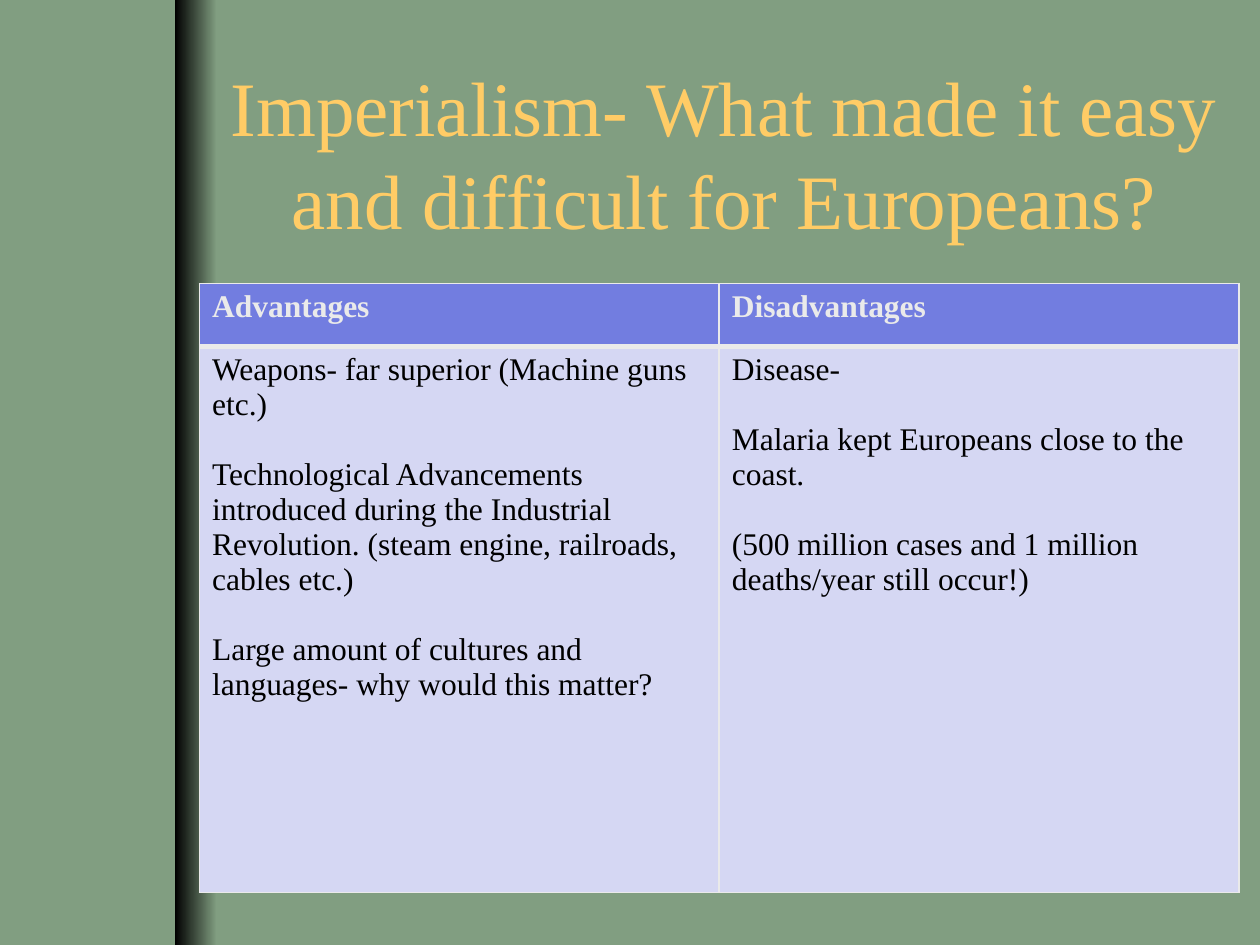
from lxml import etree
from pptx import Presentation
from pptx.dml.color import RGBColor
from pptx.enum.shapes import MSO_SHAPE
from pptx.enum.text import MSO_ANCHOR, PP_ALIGN
from pptx.oxml.ns import qn
from pptx.util import Pt

RECTANGLE = MSO_SHAPE.RECTANGLE
MIDDLE = MSO_ANCHOR.MIDDLE
CENTER = PP_ALIGN.CENTER

HEADINGS = ["Advantages", "Disadvantages"]
POINTS = [
    [
        "Weapons- far superior (Machine guns etc.)",
        "Technological Advancements introduced during the Industrial "
        "Revolution. (steam engine, railroads, cables etc.)",
        "Large amount of cultures and languages- why would this matter?",
    ],
    [
        "Disease-",
        "Malaria kept Europeans close to the coast.",
        "(500 million cases and 1 million deaths/year still occur!)",
    ],
]


def color(hex_value):
    return RGBColor.from_string(hex_value)


class ImperialismSlide:
    font = "Times New Roman"
    green = "819E81"
    gold = "FFCC66"
    pale = "EAEAEA"
    black = "000000"
    header_fill = "727DE0"
    body_fill = "D5D7F3"

    def __init__(self, slide):
        self.slide = slide
        background = slide.background.fill
        background.solid()
        background.fore_color.rgb = color(self.green)

    def style(self, paragraph, size, hex_value, bold=False):
        for run in paragraph.runs:
            run.font.name = self.font
            run.font.size = Pt(size)
            run.font.bold = bold
            run.font.color.rgb = color(hex_value)

    def shaded_band(self, left, top, width, height):
        band = self.slide.shapes.add_shape(
            RECTANGLE, Pt(left), Pt(top), Pt(width), Pt(height))
        band.shadow.inherit = False
        band.line.fill.background()
        band.fill.gradient()
        band.fill.gradient_angle = 0
        for stop, shade in zip(band.fill.gradient_stops, (self.black, self.green)):
            stop.color.rgb = color(shade)

    def title(self, text, left, top, width, height):
        frame = self.slide.shapes.add_textbox(
            Pt(left), Pt(top), Pt(width), Pt(height)).text_frame
        frame.word_wrap = True
        frame.vertical_anchor = MIDDLE
        frame.text = text
        heading = frame.paragraphs[0]
        heading.alignment = CENTER
        heading.line_spacing = Pt(53)
        self.style(heading, 44, self.gold)

    def border(self, cell, side, width):
        edge = etree.Element(qn(f"a:ln{side}"), w=str(Pt(width)))
        solid = etree.SubElement(edge, qn("a:solidFill"))
        etree.SubElement(solid, qn("a:srgbClr"), val=self.pale)
        return edge

    def cell(self, cell, lines, fill, ink, bold, widths):
        cell.text = "\n".join(lines)
        for index, paragraph in enumerate(cell.text_frame.paragraphs):
            if index:
                paragraph.space_before = Pt(20)
            self.style(paragraph, 18, ink, bold)
        cell.fill.solid()
        cell.fill.fore_color.rgb = color(fill)
        properties = cell._tc.get_or_add_tcPr()
        for position, (side, width) in enumerate(zip("LRTB", widths)):
            properties.insert(position, self.border(cell, side, width))

    def comparison(self, left, top, width, row_heights):
        table = self.slide.shapes.add_table(
            2, len(HEADINGS), Pt(left), Pt(top), Pt(width),
            Pt(sum(row_heights))).table
        table.first_row = False
        table.horz_banding = False
        for row, height in zip(table.rows, row_heights):
            row.height = Pt(height)
        for column, (heading, points) in enumerate(zip(HEADINGS, POINTS)):
            self.cell(table.cell(0, column), [heading], self.header_fill,
                      self.pale, True, (1, 1, 1, 3))
            self.cell(table.cell(1, column), points, self.body_fill,
                      self.black, False, (1, 1, 3, 1))


def main():
    presentation = Presentation()
    presentation.slide_width = Pt(720)
    presentation.slide_height = Pt(540)
    blank = presentation.slide_layouts[6]
    page = ImperialismSlide(presentation.slides.add_slide(blank))
    page.shaded_band(100, 0, 24, 540)
    page.title("Imperialism- What made it easy and difficult for Europeans?",
               108, 42, 612, 90)
    page.comparison(114, 162, 594, (36, 312))
    presentation.save("out.pptx")


if __name__ == "__main__":
    main()
